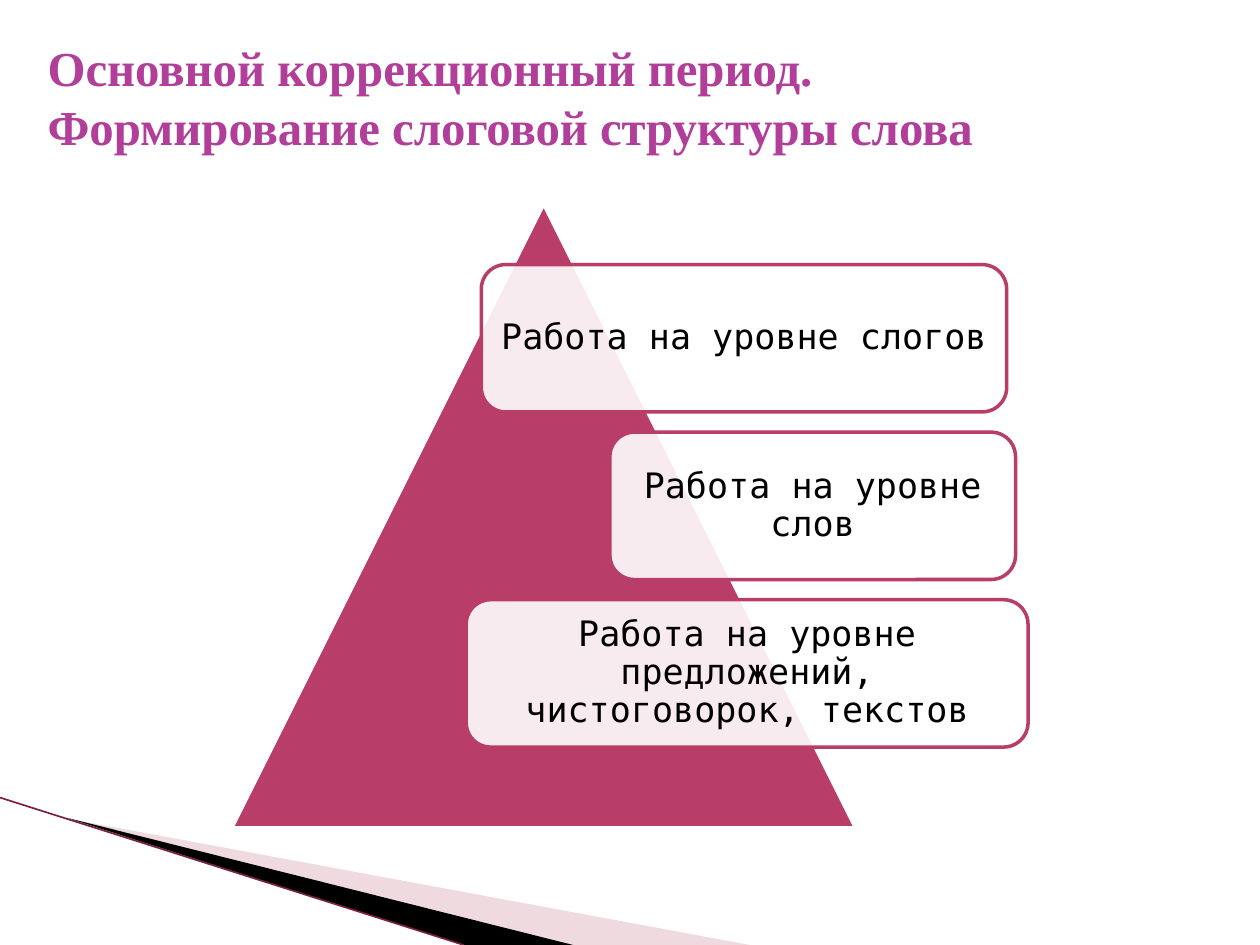
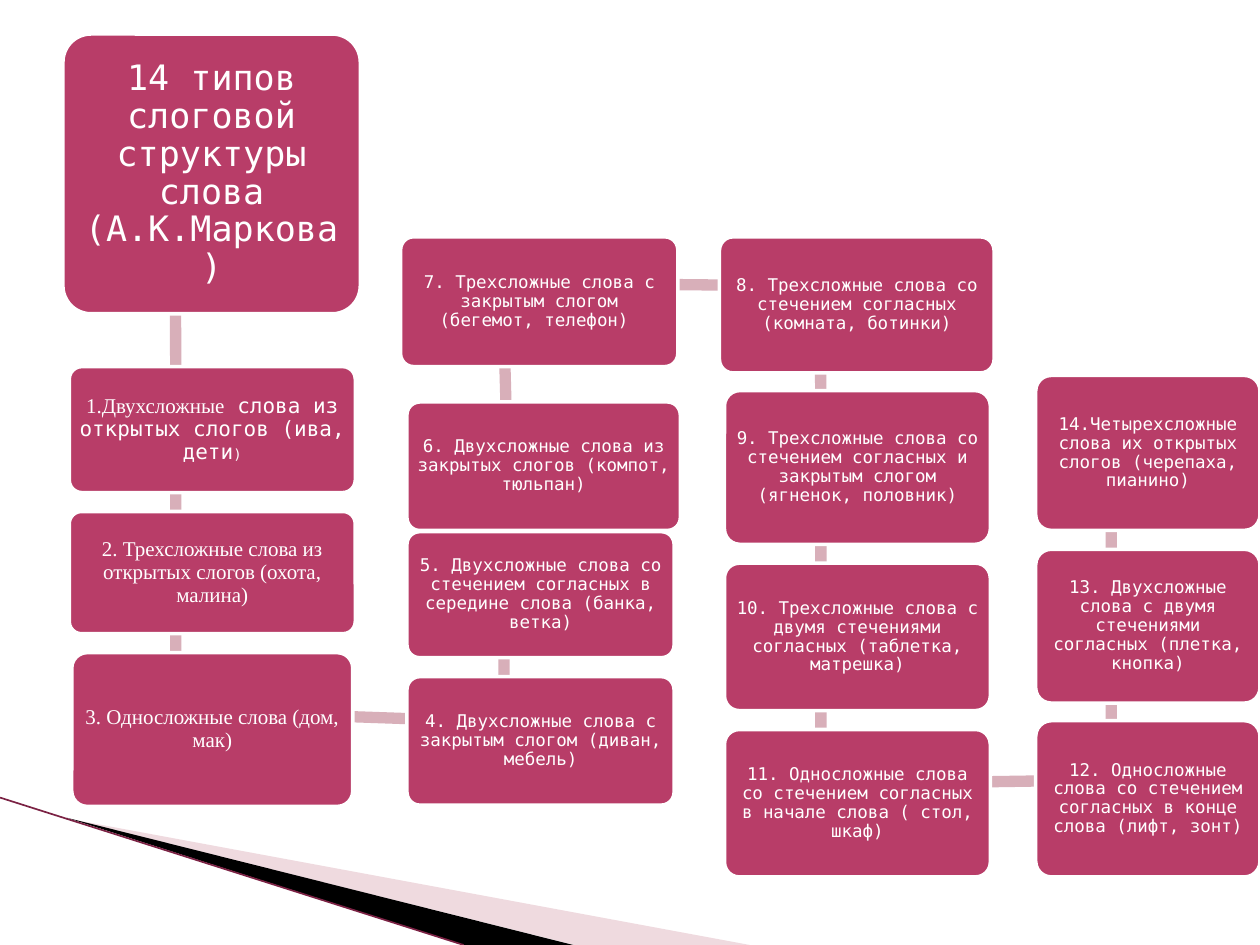
from itertools import pairwise
from math import atan2, degrees, hypot

from lxml import etree
from pptx import Presentation
from pptx.dml.color import RGBColor
from pptx.enum.shapes import MSO_CONNECTOR, MSO_SHAPE
from pptx.enum.text import MSO_ANCHOR, PP_ALIGN
from pptx.oxml.ns import qn
from pptx.util import Inches, Pt

MONO = "DejaVu Sans Mono"
SERIF = "Times New Roman"
BERRY = "B83D68"
WHITE = "FFFFFF"
BLACK = "000000"
PURPLE = "B13F9A"
ROSE = "D8A3AF"
LINK = "D8AFB9"
WINE = "7B2244"


def color(text):
    return RGBColor.from_string(text)


class Deck:
    """Holds the shared style and the slide being filled."""

    def __init__(self):
        self.prs = Presentation()
        self.prs.slide_width = Inches(10)
        self.prs.slide_height = Inches(7.5)

    def page(self):
        """Start a blank slide with the wedges in its lower corner."""
        self.slide = self.prs.slides.add_slide(self.prs.slide_layouts[6])
        self.shapes = self.slide.shapes
        self.wedge([(0.55, 6.5), (5.95, 7.5), (4.56, 7.5)], ROSE, 40)
        self.wedge([(0.53, 6.49), (4.55, 7.5), (3.68, 7.5)], BLACK)
        self.line((0, 6.33), (3.68, 7.5), WINE, 0.95)

    def paint(self, shape, fill, line=None, alpha=100):
        """Set fill (alpha is opacity in percent) and outline."""
        shape.shadow.inherit = False
        shape.fill.solid()
        shape.fill.fore_color.rgb = color(fill)
        if alpha < 100:
            tint = shape.fill._xPr.find(qn("a:solidFill"))[0]
            etree.SubElement(tint, qn("a:alpha"), val=str(alpha * 1000))
        if line:
            shape.line.color.rgb = color(line)
            shape.line.width = Pt(2)
        else:
            shape.line.fill.background()

    def wedge(self, points, fill, alpha=100):
        start, *rest = [(Inches(x), Inches(y)) for x, y in points]
        path = self.shapes.build_freeform(*start)
        path.add_line_segments(rest)
        self.paint(path.convert_to_shape(), fill, alpha=alpha)

    def line(self, start, end, ink, width):
        ends = [Inches(v) for v in (*start, *end)]
        line = self.shapes.add_connector(MSO_CONNECTOR.STRAIGHT, *ends)
        line.line.color.rgb = color(ink)
        line.line.width = Pt(width)
        etree.SubElement(line._element.spPr, qn("a:effectLst"))

    def shape(self, kind, area, fill, line=None, alpha=100):
        shape = self.shapes.add_shape(kind, *[Inches(v) for v in area])
        self.paint(shape, fill, line, alpha)
        return shape

    def title(self, lines):
        box = self.shapes.add_textbox(
            Inches(0.28), Inches(0.3), Inches(9.22), Inches(1.48))
        frame = box.text_frame
        frame.word_wrap = True
        frame.margin_top = 0
        for i, text in enumerate(lines):
            para = frame.paragraphs[0] if i == 0 else frame.add_paragraph()
            para.text = text
            self.font(para.font, 27.9, SERIF, PURPLE)
            para.font.bold = True

    def font(self, font, size, name, ink):
        font.size = Pt(size)
        font.name = name
        font.color.rgb = color(ink)

    def card(self, area, runs, ink, fill, line, pad, alpha=100, corner=None):
        """Add a rounded box; runs are (text, size, font name)."""
        box = self.shape(MSO_SHAPE.ROUNDED_RECTANGLE, area, fill, line, alpha)
        if corner:
            box.adjustments[0] = corner
        frame = box.text_frame
        frame.word_wrap = True
        frame.vertical_anchor = MSO_ANCHOR.MIDDLE
        frame.margin_left = frame.margin_right = Inches(pad)
        frame.margin_top = frame.margin_bottom = Inches(pad)
        para = frame.paragraphs[0]
        para.alignment = PP_ALIGN.CENTER
        para.line_spacing = 0.9
        if len(runs) == 1:
            text, size, name = runs[0]
            para.add_run().text = text
            self.font(para.font, size, name, ink)
            return
        for text, size, name in runs:
            run = para.add_run()
            run.text = text
            self.font(run.font, size, name, ink)

    def link(self, one, two):
        """Lay a bar as long as the way between two box centres."""
        (ax, ay), (bx, by) = [
            (x + w / 2, y + h / 2) for x, y, w, h in (one, two)]
        size, thick = hypot(bx - ax, by - ay), 0.09
        midx, midy = (ax + bx) / 2 - 0.29, (ay + by) / 2 - 0.15
        area = (midx - size / 2, midy - thick / 2, size, thick)
        bar = self.shape(MSO_SHAPE.RECTANGLE, area, LINK)
        bar.rotation = degrees(atan2(by - ay, bx - ax)) % 360


def levels(deck):
    deck.page()
    deck.shape(MSO_SHAPE.ISOSCELES_TRIANGLE, (1.84, 1.62, 4.95, 4.95),
               BERRY, WHITE)
    cards = [
        (3.82, 4.17, "Работа на уровне слогов"),
        (4.84, 3.22, "Работа на уровне слов"),
        (3.7, 4.46, "Работа на уровне предложений, чистоговорок, текстов"),
    ]
    for i, (left, width, text) in enumerate(cards):
        deck.card((left, 2.1 + 1.33 * i, width, 1.17), [(text, 20, MONO)],
                  BLACK, WHITE, BERRY, 0.08, alpha=90)
    deck.title(["Основной коррекционный период.",
                "Формирование слоговой структуры слова"])


def types(deck):
    deck.page()
    first = [("1.Двухсложные", 12, SERIF),
             (" слова из открытых слогов (ива, дети", 12, MONO),
             (")", 8, MONO)]

    def serif(text):
        return [(text, 12, SERIF)]

    def mono(text):
        return [(text, 10, MONO)]

    steps = [
        ((0.5, 0.27, 2.36, 2.22),
         [("14 типов слоговой структуры слова (А.К.Маркова)", 20, MONO)]),
        ((0.55, 2.91, 2.27, 1), first),
        ((0.55, 4.06, 2.27, 0.97),
         serif("2. Трехсложные слова из открытых слогов (охота, малина)")),
        ((0.57, 5.18, 2.23, 1.22), serif("3. Односложные слова (дом, мак)")),
        ((3.23, 5.37, 2.12, 1.02),
         mono("4. Двухсложные слова с закрытым слогом (диван, мебель)")),
        ((3.23, 4.22, 2.12, 1),
         mono("5. Двухсложные слова со стечением согласных "
              "в середине слова (банка, ветка)")),
        ((3.23, 3.19, 2.17, 1.02),
         mono("6. Двухсложные слова из закрытых слогов (компот, тюльпан)")),
        ((3.18, 1.88, 2.2, 1.03),
         mono("7. Трехсложные слова с закрытым слогом (бегемот, телефон) ")),
        ((5.71, 1.88, 2.18, 1.08),
         mono("8. Трехсложные слова со стечением согласных "
              "(комната, ботинки)")),
        ((5.75, 3.1, 2.11, 1.22),
         mono("9. Трехсложные слова со стечением согласных "
              "и закрытым слогом (ягненок, половник)")),
        ((5.75, 4.47, 2.11, 1.17),
         mono("10. Трехсложные слова с двумя стечениями согласных "
              "(таблетка, матрешка)")),
        ((5.75, 5.79, 2.11, 1.17),
         mono("11. Односложные слова со стечением согласных "
              "в начале слова ( стол, шкаф)")),
        ((8.22, 5.72, 1.78, 1.24),
         mono("12. Односложные слова со стечением согласных "
              "в конце слова (лифт, зонт)")),
        ((8.22, 4.36, 1.78, 1.22),
         mono("13. Двухсложные слова с двумя стечениями согласных "
              "(плетка, кнопка)")),
        ((8.22, 2.98, 1.78, 1.23),
         mono("14.Четырехсложные слова их открытых слогов "
              "(черепаха, пианино)")),
    ]
    for (one, _), (two, _) in pairwise(steps):
        deck.link(one, two)
    pads = {20: 0.08, 12: 0.05, 10: 0.04}
    for area, runs in steps:
        deck.card(area, runs, WHITE, BERRY, WHITE, pads[runs[0][1]],
                  corner=0.1)


def main():
    deck = Deck()
    levels(deck)
    types(deck)
    deck.prs.save("out.pptx")


if __name__ == "__main__":
    main()
